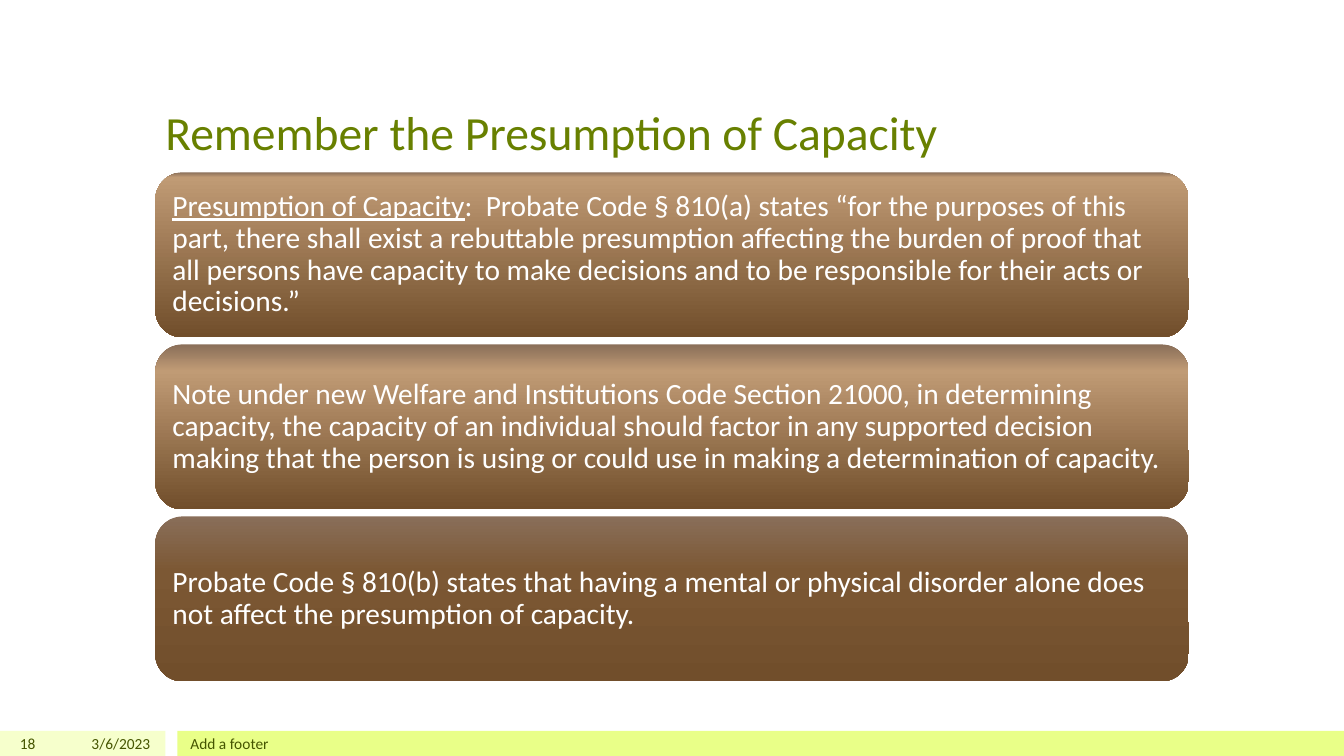
from copy import deepcopy

from pptx import Presentation
from pptx.dml.color import RGBColor
from pptx.enum.shapes import MSO_SHAPE
from pptx.enum.text import MSO_ANCHOR, MSO_AUTO_SIZE, PP_ALIGN
from pptx.util import Inches, Pt

WIDTH, HEIGHT = 13.33, 7.5
MARGIN = 1.54
CONTENT_WIDTH = WIDTH - 2 * MARGIN
FOOTER_HEIGHT = 0.25
FONT = "Calibri"
COLORS = {
    "title": "688000",
    "footer_text": "455500",
    "pale_lime": "F6FFCC",
    "lime": "E9FF88",
    "card_text": "FFFFFF",
    "card_top": "896E59",
    "tan": "C09B75",
    "brown": "7C5834",
    "card_bottom": "714E2B",
}
CARDS = [
    (3, "tan", [
        ("Presumption of Capacity", True),
        (":  Probate Code § 810(a) states “for the purposes of this part, there shall "
         "exist a rebuttable presumption affecting the burden of proof that all persons "
         "have capacity to make decisions and to be responsible for their acts or "
         "decisions.”", False),
    ]),
    (16, "tan", [
        ("Note under new Welfare and Institutions Code Section 21000, in determining "
         "capacity, the capacity of an individual should factor in any supported decision "
         "making that the person is using or could use in making a determination of "
         "capacity.", False),
    ]),
    (33, "brown", [
        ("Probate Code § 810(b) states that having a mental or physical disorder alone "
         "does not affect the presumption of capacity.", False),
    ]),
]


def color(name):
    """Return the named palette colour."""
    return RGBColor.from_string(COLORS[name])


def box_lengths(*box):
    """Convert left, top, width and height from inches."""
    return [Inches(length) for length in box]


def style_paragraph(paragraph, size, color_name, alignment=PP_ALIGN.LEFT):
    """Set the font and alignment of a paragraph."""
    paragraph.alignment = alignment
    paragraph.font.name = FONT
    paragraph.font.size = Pt(size)
    paragraph.font.color.rgb = color(color_name)


def add_title(slide, left, top, width, height):
    """Place the slide title at the bottom of its box."""
    title = slide.shapes.title
    title.left, title.top, title.width, title.height = box_lengths(left, top, width, height)
    frame = title.text_frame
    frame.text = "Remember the Presumption of Capacity"
    frame.auto_size = MSO_AUTO_SIZE.NONE
    frame.word_wrap = True
    frame.vertical_anchor = MSO_ANCHOR.BOTTOM
    frame.margin_bottom = 0
    style_paragraph(frame.paragraphs[0], 34, "title")


def add_plain_shape(slide, kind, box):
    """Add a shape without line or shadow."""
    shape = slide.shapes.add_shape(kind, *box_lengths(*box))
    shape.shadow.inherit = False
    shape.line.fill.background()
    return shape


def fill_gradient(shape, middle_percent, middle_color):
    """Fill a shape with a three-stop gradient running downwards."""
    shape.fill.gradient()
    shape.fill.gradient_angle = 270
    stop_list = shape.fill._fill._gradFill.gsLst
    stop_list.insert(1, deepcopy(stop_list[0]))
    stops = [(0, "card_top"), (middle_percent / 100, middle_color), (1, "card_bottom")]
    for stop, (position, name) in zip(shape.fill.gradient_stops, stops):
        stop.position = position
        stop.color.rgb = color(name)


def add_card(slide, box, middle_percent, middle_color, runs):
    """Add one rounded card with its statement."""
    card = add_plain_shape(slide, MSO_SHAPE.ROUNDED_RECTANGLE, box)
    fill_gradient(card, middle_percent, middle_color)
    frame = card.text_frame
    frame.word_wrap = True
    frame.vertical_anchor = MSO_ANCHOR.MIDDLE
    frame.margin_left = frame.margin_right = Inches(0.09)
    frame.margin_top = frame.margin_bottom = Inches(0.09)
    paragraph = frame.paragraphs[0]
    style_paragraph(paragraph, 21, "card_text")
    paragraph.line_spacing = 0.9
    for text, underlined in runs:
        run = paragraph.add_run()
        run.text = text
        if underlined:
            run.font.underline = True


def add_cards(slide, left, top, width, height, gap=0.07):
    """Stack the cards evenly in the given box."""
    card_height = (height - gap * (len(CARDS) - 1)) / len(CARDS)
    for row, card in enumerate(CARDS):
        card_top = top + row * (card_height + gap)
        add_card(slide, (left, card_top, width, card_height), *card)


def add_footer(slide, top, width, height):
    """Add the two footer bands with number, date and footer text."""
    bands = [(0, 1.64, "pale_lime"), (1.76, width - 1.76, "lime")]
    for left, band_width, name in bands:
        band = add_plain_shape(slide, MSO_SHAPE.RECTANGLE, (left, top, band_width, height))
        band.fill.solid()
        band.fill.fore_color.rgb = color(name)
    labels = [
        (0, 0.45, "18", PP_ALIGN.RIGHT),
        (0.5, 1.09, "3/6/2023", PP_ALIGN.RIGHT),
        (1.79, 10, "Add a footer", PP_ALIGN.LEFT),
    ]
    for left, label_width, text, alignment in labels:
        label = slide.shapes.add_textbox(*box_lengths(left, top, label_width, height))
        frame = label.text_frame
        frame.word_wrap = True
        frame.vertical_anchor = MSO_ANCHOR.MIDDLE
        frame.text = text
        style_paragraph(frame.paragraphs[0], 11, "footer_text", alignment)


def main():
    """Build and save the presentation."""
    presentation = Presentation()
    presentation.slide_width = Inches(WIDTH)
    presentation.slide_height = Inches(HEIGHT)
    slide = presentation.slides.add_slide(presentation.slide_layouts[5])
    add_footer(slide, HEIGHT - FOOTER_HEIGHT, WIDTH, FOOTER_HEIGHT)
    add_title(slide, MARGIN, 0.3, CONTENT_WIDTH, 1.29)
    add_cards(slide, MARGIN, 1.71, CONTENT_WIDTH, 5.05)
    presentation.save("out.pptx")


if __name__ == "__main__":
    main()
